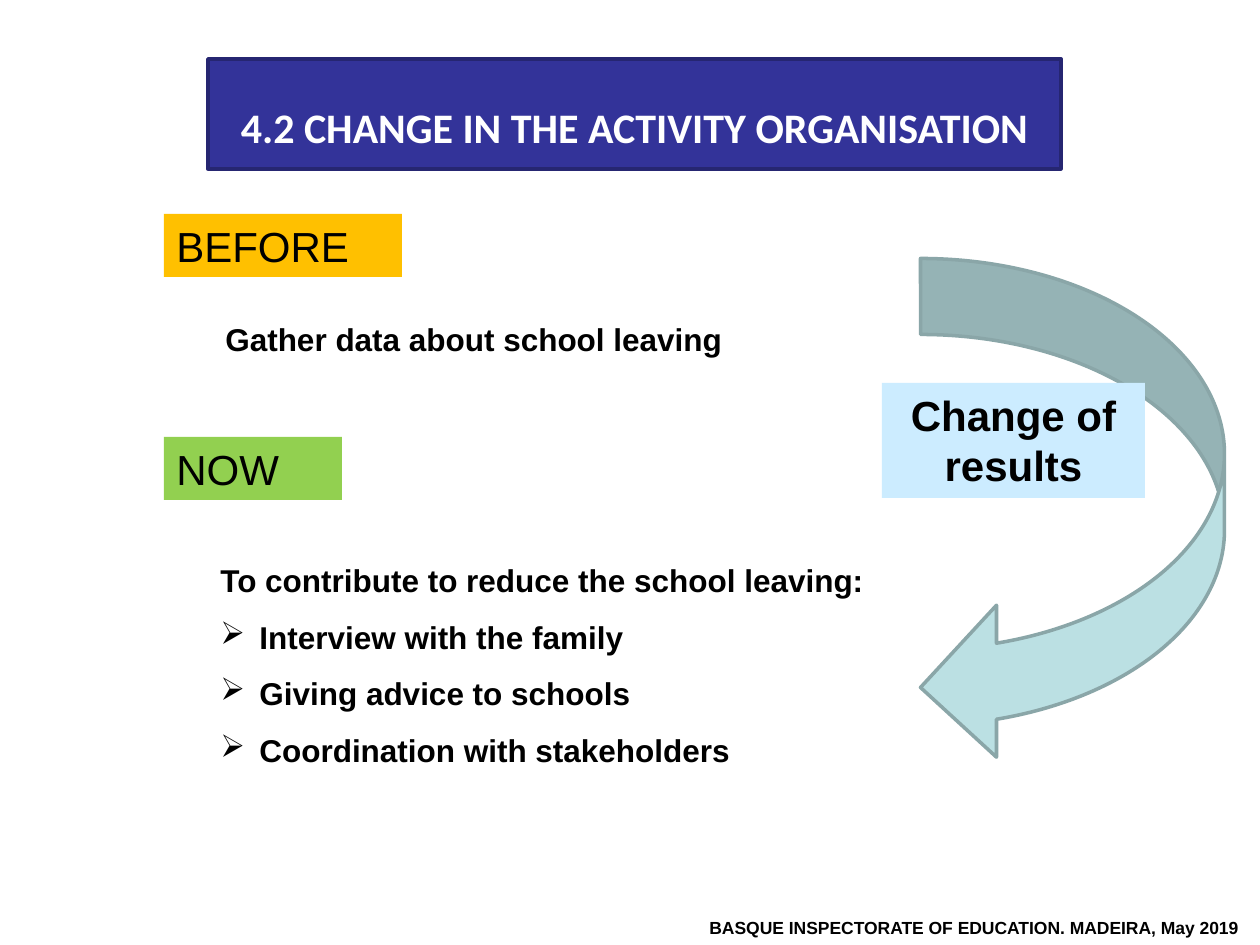
import pptx
import pptx.dml.color
import pptx.enum.shapes
import pptx.enum.text
import pptx.oxml.ns
import pptx.util
from lxml import etree

EMU_PER_PX = 914400 / 126
SHAPES = pptx.enum.shapes.MSO_SHAPE
ALIGN = pptx.enum.text.PP_ALIGN
ANCHOR = pptx.enum.text.MSO_ANCHOR
COLORS = {
    "text": "000000",
    "title_text": "FFFFFF",
    "title_fill": "333399",
    "title_line": "262671",
    "before": "FFC000",
    "now": "92D050",
    "arrow_fill": "BBE0E3",
    "arrow_line": "8AA6A8",
    "results": "CCECFF",
}


def px(length):
    """Turn whole pixels into EMU."""
    return pptx.util.Emu(round(length * EMU_PER_PX))


def rgb(name):
    """Look up a named colour."""
    return pptx.dml.color.RGBColor.from_string(COLORS[name])


def add_bullet(paragraph, mark, indent):
    """Give a paragraph a hanging bullet."""
    properties = paragraph._p.get_or_add_pPr()
    properties.set("marL", str(px(indent)))
    properties.set("indent", str(-px(indent)))
    bullet = etree.SubElement(properties, pptx.oxml.ns.qn("a:buChar"))
    bullet.set("char", mark)


def write(shape, lines, size, bold=False, color="text", font="Arial", align=ALIGN.LEFT,
          spacing=None, wrap=True, anchor=ANCHOR.TOP, bullets_from=None):
    """Fill a shape with evenly styled paragraphs."""
    frame = shape.text_frame
    frame.word_wrap = wrap
    frame.vertical_anchor = anchor
    for index, line in enumerate(lines):
        paragraph = frame.add_paragraph() if index else frame.paragraphs[0]
        paragraph.text = line
        paragraph.alignment = align
        if spacing:
            paragraph.line_spacing = spacing
        if bullets_from is not None and index >= bullets_from:
            add_bullet(paragraph, "➢", 39)
        paragraph.font.name = font
        paragraph.font.size = pptx.util.Pt(size)
        paragraph.font.bold = bold
        paragraph.font.color.rgb = rgb(color)


def add_text(slide, box, lines, size, **style):
    """Add a bold text box."""
    write(slide.shapes.add_textbox(*map(px, box)), lines, size, bold=True, **style)


def add_figure(slide, kind, box, fill, line=None):
    """Add a flat preset shape with an optional outline."""
    figure = slide.shapes.add_shape(kind, *map(px, box))
    figure.shadow.inherit = False
    figure.fill.solid()
    figure.fill.fore_color.rgb = rgb(fill)
    if line:
        figure.line.color.rgb = rgb(line)
        figure.line.width = pptx.util.Pt(2)
    else:
        figure.line.fill.background()
    return figure


def add_label(slide, box, fill, text, **style):
    """Add a filled rectangle holding a large label."""
    write(add_figure(slide, SHAPES.RECTANGLE, box, fill), [text], 24, **style)


def main():
    """Build the slide and save it."""
    deck = pptx.Presentation()
    deck.slide_width, deck.slide_height = px(1260), px(945)
    slide = deck.slides.add_slide(deck.slide_layouts[6])

    add_text(slide, (697, 911, 563, 34),
             ["BASQUE INSPECTORATE OF EDUCATION. MADEIRA, May 2019"], 10, wrap=False)
    title = add_figure(slide, SHAPES.RECTANGLE, (208, 59, 853, 110), "title_fill", "title_line")
    write(title, ["4.2 CHANGE IN THE ACTIVITY ORGANISATION"], 24, bold=True, color="title_text",
          font="Calibri", align=ALIGN.CENTER, spacing=1.5, anchor=ANCHOR.MIDDLE)

    add_label(slide, (164, 214, 238, 63), "before", "BEFORE")
    add_label(slide, (164, 437, 178, 63), "now", "NOW")
    add_text(slide, (213, 314, 893, 50), ["Gather data about school leaving"], 18)
    add_text(slide, (208, 536, 675, 234), [
        "To contribute to reduce the school leaving:",
        "Interview with the family",
        "Giving advice to schools",
        "Coordination with stakeholders",
    ], 18, spacing=1.5, wrap=False, bullets_from=1)

    arrow = add_figure(slide, SHAPES.CURVED_DOWN_ARROW, (820, 359, 505, 304),
                       "arrow_fill", "arrow_line")
    arrow.rotation = 90
    add_label(slide, (882, 383, 263, 115), "results", "Change of results",
              bold=True, align=ALIGN.CENTER)
    deck.save("out.pptx")


if __name__ == "__main__":
    main()
